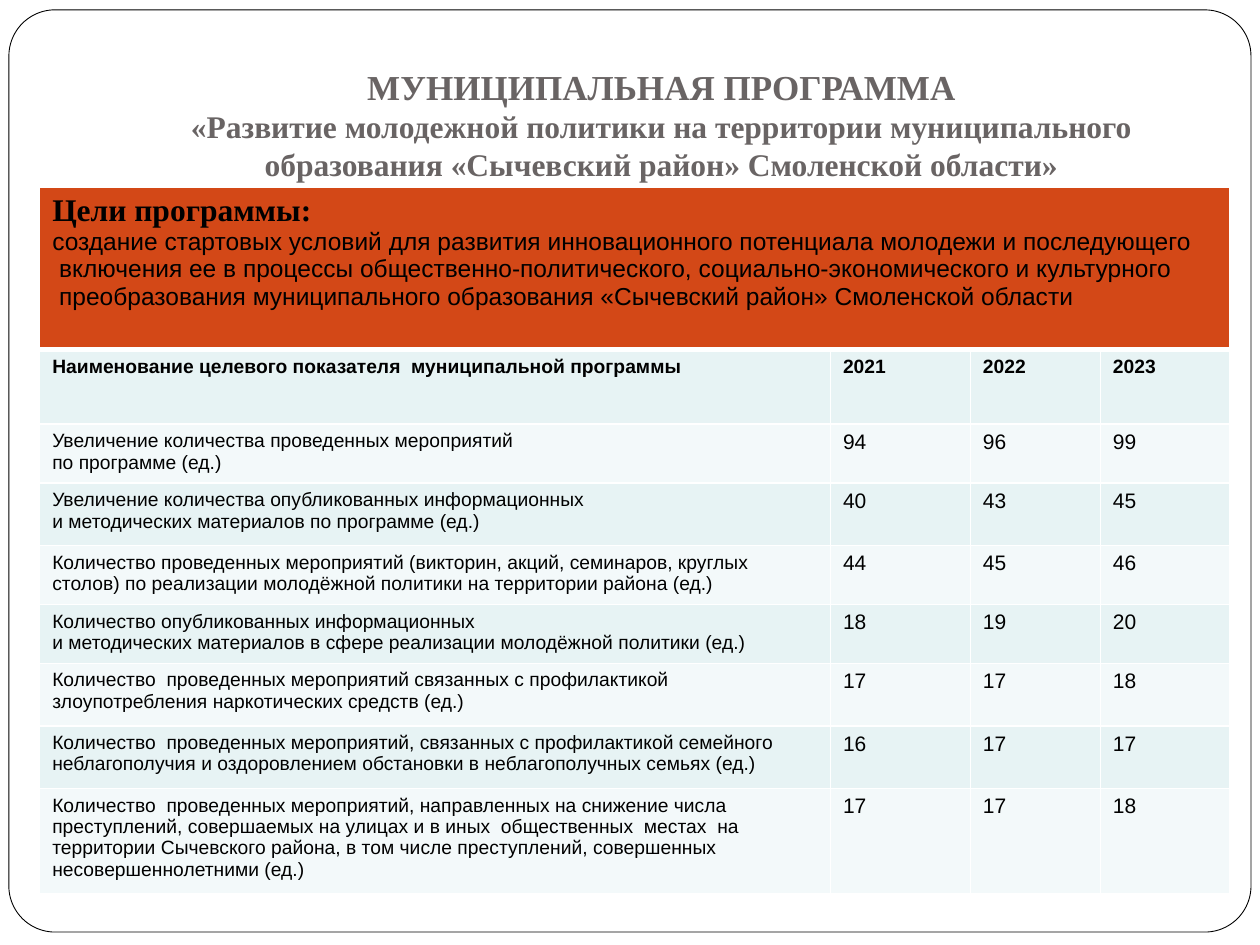
import pptx
import pptx.util
import pptx.dml.color
import pptx.enum.shapes
import pptx.enum.text
import pptx.oxml
import pptx.oxml.ns
from pptx.util import Cm, Pt

THEME = {
    "serif": "Times New Roman", "sans": "Arial",
    "ink": "000000", "title": "696464", "paper": "FFFFFF",
    "goal": "D34817", "bands": ("E7F3F4", "F3F9FA"),
    "head": 20, "sub": 18, "body": 14, "value": 12, "label": 11,
}

TITLE = (
    "МУНИЦИПАЛЬНАЯ ПРОГРАММА",
    "«Развитие молодежной политики на территории муниципального "
    "образования «Сычевский район» Смоленской области»",
)
GOAL = (
    "Цели программы:",
    "создание стартовых условий для развития инновационного потенциала молодежи и последующего",
    " включения ее в процессы общественно-политического, социально-экономического и культурного",
    " преобразования муниципального образования «Сычевский район» Смоленской области",
)
ROWS = (
    ("Наименование целевого показателя  муниципальной программы", 2021, 2022, 2023),
    ("Увеличение количества проведенных мероприятий\nпо программе (ед.)", 94, 96, 99),
    ("Увеличение количества опубликованных информационных \v"
     "и методических материалов по программе (ед.)", 40, 43, 45),
    ("Количество проведенных мероприятий (викторин, акций, семинаров, круглых столов) "
     "по реализации молодёжной политики на территории района (ед.)", 44, 45, 46),
    ("Количество опубликованных информационных\n"
     "и методических материалов в сфере реализации молодёжной политики (ед.)", 18, 19, 20),
    ("Количество  проведенных мероприятий связанных с профилактикой "
     "злоупотребления наркотических средств (ед.)", 17, 17, 18),
    ("Количество  проведенных мероприятий, связанных с профилактикой семейного "
     "неблагополучия и оздоровлением обстановки в неблагополучных семьях (ед.)", 16, 17, 17),
    ("Количество  проведенных мероприятий, направленных на снижение числа преступлений, "
     "совершаемых на улицах и в иных  общественных  местах  на  территории Сычевского района, "
     "в том числе преступлений, совершенных несовершеннолетними (ед.)", 17, 17, 18),
)
WIDTHS = (15.94, 2.82, 2.62, 2.62)
HEIGHTS = (3.28, 1.5, 1.14, 1.26, 1.12, 1.12, 1.26, 1.26, 1.98)


def tint(code):
    return pptx.dml.color.RGBColor.from_string(code)


def style(para, face, size, color, bold=False):
    for run in para.runs:
        font = run.font
        font.name, font.size, font.bold = THEME[face], Pt(THEME[size]), bold
        font.color.rgb = tint(THEME[color])


def paint(cell, color, top=1, base=1):
    props = cell._tc.get_or_add_tcPr()
    for side, width in (("L", 1), ("R", 1), ("T", top), ("B", base)):
        props.append(pptx.oxml.parse_xml(
            f'<a:ln{side} {pptx.oxml.ns.nsdecls("a")} w="{Pt(width)}"><a:solidFill>'
            f'<a:srgbClr val="{THEME["paper"]}"/></a:solidFill></a:ln{side}>'))
    cell.fill.solid()
    cell.fill.fore_color.rgb = tint(color)


def add_frame(slide):
    kind = pptx.enum.shapes.MSO_SHAPE.ROUNDED_RECTANGLE
    frame = slide.shapes.add_shape(kind, Cm(0.18), Cm(0.2), Cm(25.04), Cm(18.59))
    frame.adjustments[0] = 0.05
    frame.shadow.inherit = False
    frame.fill.solid()
    frame.fill.fore_color.rgb = tint(THEME["paper"])
    frame.line.color.rgb = tint(THEME["ink"])
    frame.line.width = Pt(0.5)


def add_title(slide):
    box = slide.shapes.add_textbox(Cm(2.54), Cm(0.76), Cm(21.59), Cm(3.18))
    text = box.text_frame
    text.word_wrap = True
    text.vertical_anchor = pptx.enum.text.MSO_ANCHOR.BOTTOM
    text.margin_bottom = Cm(0.25)
    text.text = "\v".join(TITLE)
    para = text.paragraphs[0]
    para.alignment = pptx.enum.text.PP_ALIGN.CENTER
    style(para, "serif", "sub", "title", True)
    para.runs[0].font.size = Pt(THEME["head"])


def add_grid(slide):
    grid = slide.shapes.add_table(
        len(HEIGHTS), len(WIDTHS), Cm(0.8), Cm(3.77),
        Cm(sum(WIDTHS)), Cm(sum(HEIGHTS))).table
    for col, width in zip(grid.columns, WIDTHS):
        col.width = Cm(width)
    for row, height in zip(grid.rows, HEIGHTS):
        row.height = Cm(height)

    goal = grid.cell(0, 0)
    goal.merge(grid.cell(0, len(WIDTHS) - 1))
    goal.text_frame.text = "\n".join(GOAL)
    for para in goal.text_frame.paragraphs:
        style(para, "sans", "body", "ink")
    style(goal.text_frame.paragraphs[0], "serif", "sub", "ink", True)
    for cell in grid.rows[0].cells:
        paint(cell, THEME["goal"], base=3)

    for row, items in enumerate(ROWS, 1):
        head = row == 1
        for col, item in enumerate(items):
            cell = grid.cell(row, col)
            cell.text_frame.text = str(item)
            size = "label" if head or col == 0 else "value"
            for para in cell.text_frame.paragraphs:
                style(para, "sans", size, "ink", head)
            paint(cell, THEME["bands"][(row - 1) % 2], top=3 if head else 1)


def main():
    """Build the slide on the youth policy programme."""
    deck = pptx.Presentation()
    deck.slide_width, deck.slide_height = Cm(25.4), Cm(19.05)
    slide = deck.slides.add_slide(deck.slide_layouts[6])
    add_frame(slide)
    add_title(slide)
    add_grid(slide)
    deck.save("out.pptx")


if __name__ == "__main__":
    main()
